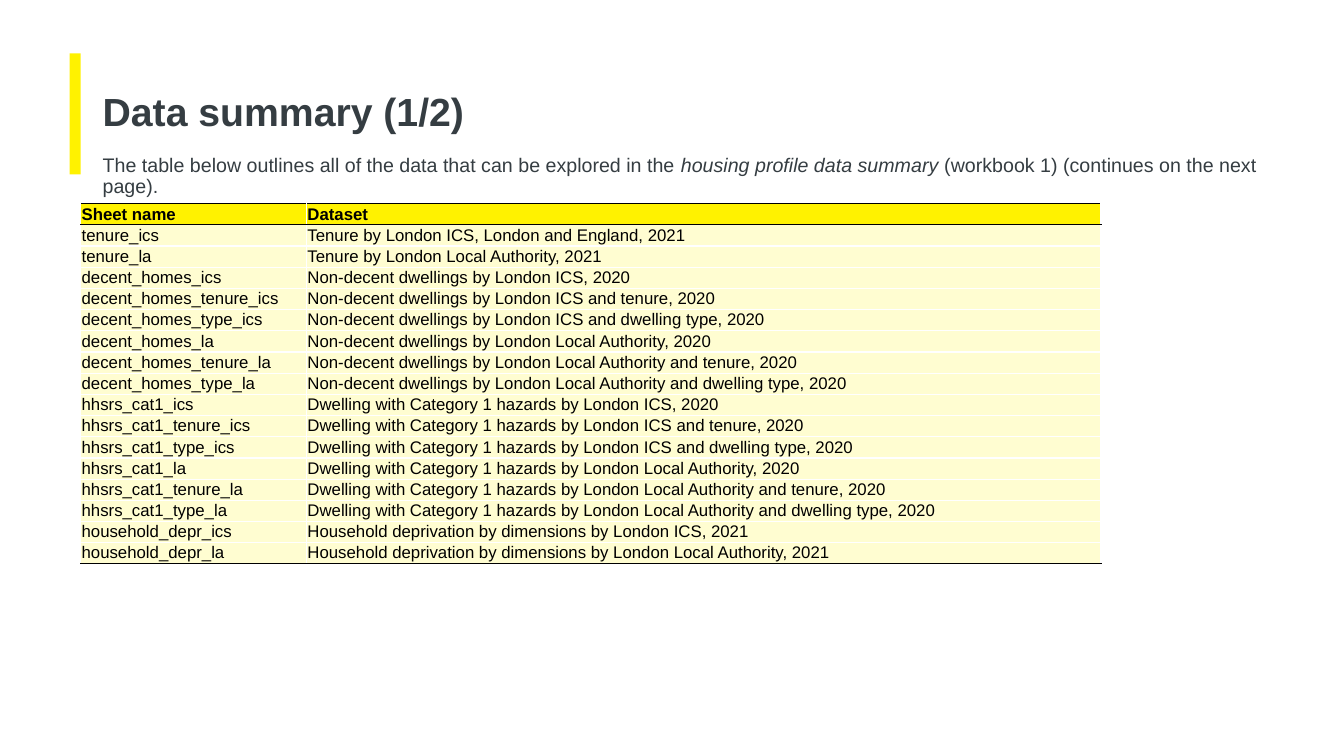
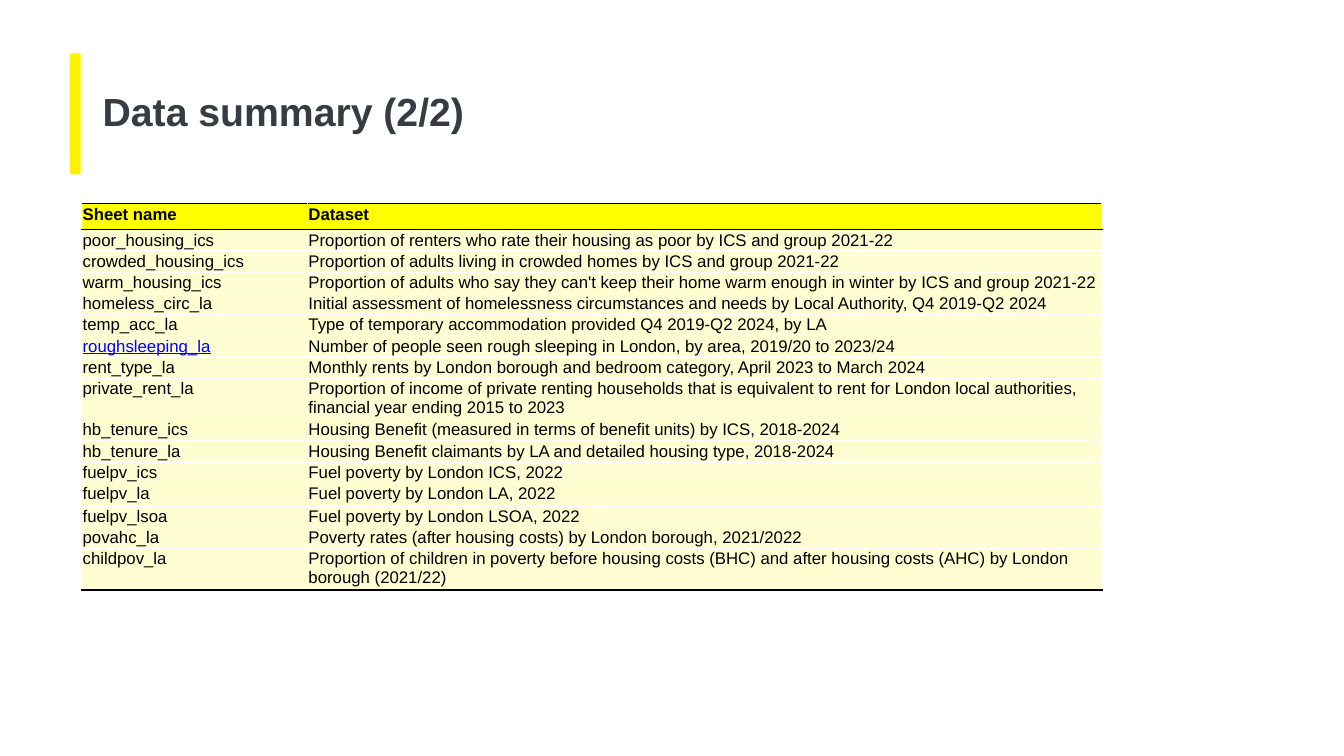
from dataclasses import dataclass

from lxml import etree
from pptx import Presentation
from pptx.dml.color import RGBColor
from pptx.enum.shapes import MSO_SHAPE
from pptx.enum.text import MSO_ANCHOR
from pptx.oxml.ns import qn
from pptx.slide import Slide
from pptx.table import _Cell
from pptx.text.text import _Paragraph, _Run
from pptx.util import Emu, Pt

RECTANGLE = MSO_SHAPE.RECTANGLE
TOP, MIDDLE = MSO_ANCHOR.TOP, MSO_ANCHOR.MIDDLE

EMU_PER_PX = 9144  # 100 px to the inch
FONT = "Arial"
COLORS = {
    "yellow": "FFF200",
    "bright_yellow": "FFFF00",
    "cream": "FFFDD1",
    "slate": "353D42",
    "black": "000000",
    "white": "FFFFFF",
    "link": "0000FF",
}
BLANK_LAYOUT = 6
COLUMN_WIDTHS = (224, 788)
TABLE_TOP = 202
ROW_HEIGHT = 19
HEADINGS = ("Sheet name", "Dataset")


@dataclass(frozen=True)
class Row:
    sheet: str
    dataset: str
    height: int = ROW_HEIGHT
    linked: bool = False


@dataclass(frozen=True)
class SummaryPage:
    title: str
    table_left: int
    header_color: str
    header_bottom_margin: int
    rows: tuple[Row, ...]
    intro: tuple[tuple[str, bool], ...] = ()  # (text, italic)


PAGES = (
    SummaryPage(
        "Data summary (1/2)", 80, "yellow", 0,
        (
            Row("tenure_ics", "Tenure by London ICS, London and England, 2021"),
            Row("tenure_la", "Tenure by London Local Authority, 2021"),
            Row("decent_homes_ics", "Non-decent dwellings by London ICS, 2020"),
            Row("decent_homes_tenure_ics", "Non-decent dwellings by London ICS and tenure, 2020"),
            Row("decent_homes_type_ics", "Non-decent dwellings by London ICS and dwelling type, 2020"),
            Row("decent_homes_la", "Non-decent dwellings by London Local Authority, 2020"),
            Row("decent_homes_tenure_la", "Non-decent dwellings by London Local Authority and tenure, 2020"),
            Row("decent_homes_type_la", "Non-decent dwellings by London Local Authority and dwelling type, 2020"),
            Row("hhsrs_cat1_ics", "Dwelling with Category 1 hazards by London ICS, 2020"),
            Row("hhsrs_cat1_tenure_ics", "Dwelling with Category 1 hazards by London ICS and tenure, 2020"),
            Row("hhsrs_cat1_type_ics", "Dwelling with Category 1 hazards by London ICS and dwelling type, 2020"),
            Row("hhsrs_cat1_la", "Dwelling with Category 1 hazards by London Local Authority, 2020"),
            Row("hhsrs_cat1_tenure_la", "Dwelling with Category 1 hazards by London Local Authority and tenure, 2020"),
            Row("hhsrs_cat1_type_la", "Dwelling with Category 1 hazards by London Local Authority and dwelling type, 2020"),
            Row("household_depr_ics", "Household deprivation by dimensions by London ICS, 2021"),
            Row("household_depr_la", "Household deprivation by dimensions by London Local Authority, 2021"),
        ),
        (
            ("The table below outlines all of the data that can be explored in the ", False),
            ("housing profile data summary", True),
            (" (workbook 1) (continues on the next page).", False),
        ),
    ),
    SummaryPage(
        "Data summary (2/2)", 81, "bright_yellow", 5,
        (
            Row("poor_housing_ics", "Proportion of renters who rate their housing as poor by ICS and group 2021-22"),
            Row("crowded_housing_ics", "Proportion of adults living in crowded homes by ICS and group 2021-22"),
            Row("warm_housing_ics", "Proportion of adults who say they can't keep their home warm enough in winter "
                "by ICS and group 2021-22"),
            Row("homeless_circ_la", "Initial assessment of homelessness circumstances and needs by Local Authority, "
                "Q4 2019-Q2 2024"),
            Row("temp_acc_la", "Type of temporary accommodation provided Q4 2019-Q2 2024, by LA"),
            Row("roughsleeping_la", "Number of people seen rough sleeping in London, by area, 2019/20 to 2023/24",
                linked=True),
            Row("rent_type_la", "Monthly rents by London borough and bedroom category, April 2023 to March 2024"),
            Row("private_rent_la", "Proportion of income of private renting households that is equivalent to rent "
                "for London local authorities, financial year ending 2015 to 2023"),
            Row("hb_tenure_ics", "Housing Benefit (measured in terms of benefit units) by ICS, 2018-2024"),
            Row("hb_tenure_la", "Housing Benefit claimants by LA and detailed housing type, 2018-2024"),
            Row("fuelpv_ics", "Fuel poverty by London ICS, 2022"),
            Row("fuelpv_la", "Fuel poverty by London LA, 2022", height=23),
            Row("fuelpv_lsoa", "Fuel poverty by London LSOA, 2022"),
            Row("povahc_la", "Poverty rates (after housing costs) by London borough, 2021/2022"),
            Row("childpov_la", "Proportion of children in poverty before housing costs (BHC) and after housing "
                "costs (AHC) by London borough (2021/22)"),
        ),
    ),
)


def px(length: int) -> Emu:
    return Emu(length * EMU_PER_PX)


def rgb(name: str) -> RGBColor:
    return RGBColor.from_string(COLORS[name])


def format_run(run: _Run, size: int, color: str, bold: bool = False, italic: bool = False) -> None:
    run.font.name = FONT
    run.font.size = Pt(size)
    run.font.color.rgb = rgb(color)
    run.font.bold = bold
    run.font.italic = italic


def add_text_box(slide: Slide, left: int, top: int, width: int, height: int, anchor: MSO_ANCHOR) -> _Paragraph:
    text_frame = slide.shapes.add_textbox(px(left), px(top), px(width), px(height)).text_frame
    text_frame.word_wrap = True
    text_frame.vertical_anchor = anchor
    paragraph = text_frame.paragraphs[0]
    paragraph.line_spacing = 0.9
    return paragraph


# Accent bar and title
def add_heading(slide: Slide, title: str) -> None:
    bar = slide.shapes.add_shape(RECTANGLE, px(69), px(53), px(11), px(120))
    bar.shadow.inherit = False
    bar.fill.solid()
    bar.fill.fore_color.rgb = rgb("yellow")
    bar.line.fill.background()
    paragraph = add_text_box(slide, 92, 40, 1150, 145, MIDDLE)
    paragraph.text = title
    format_run(paragraph.runs[0], 28, "slate", bold=True)


# Introductory sentence
def add_intro(slide: Slide, parts: tuple[tuple[str, bool], ...]) -> None:
    paragraph = add_text_box(slide, 92, 149, 1185, 43, TOP)
    for text, italic in parts:
        run = paragraph.add_run()
        run.text = text
        format_run(run, 14, "slate", italic=italic)


# Table cells
def set_borders(cell: _Cell, top: str, bottom: str) -> None:
    properties = cell._tc.get_or_add_tcPr()
    sides = {"a:lnL": "white", "a:lnR": "white", "a:lnT": top, "a:lnB": bottom}
    for position, (tag, color) in enumerate(sides.items()):
        line = etree.Element(qn(tag), w=str(Pt(1)))
        fill = etree.SubElement(line, qn("a:solidFill"))
        etree.SubElement(fill, qn("a:srgbClr"), val=COLORS[color])
        properties.insert(position, line)


def fill_cell(cell: _Cell, text: str, fill: str, bold: bool, linked: bool) -> None:
    cell.text_frame.text = text
    cell.margin_left = cell.margin_right = cell.margin_top = px(1)
    cell.margin_bottom = 0
    cell.fill.solid()
    cell.fill.fore_color.rgb = rgb(fill)
    run = cell.text_frame.paragraphs[0].runs[0]
    format_run(run, 12, "link" if linked else "black", bold=bold)
    run.font.underline = linked


# Table with a ruled header and a closing rule
def add_summary_table(slide: Slide, page: SummaryPage) -> None:
    rows = (Row(*HEADINGS), *page.rows)
    last = len(rows) - 1
    frame = slide.shapes.add_table(
        len(rows), len(COLUMN_WIDTHS), px(page.table_left), px(TABLE_TOP),
        px(sum(COLUMN_WIDTHS)), px(sum(row.height for row in rows)),
    )
    table = frame.table
    table.horz_banding = False
    for column, width in zip(table.columns, COLUMN_WIDTHS):
        column.width = px(width)
    for index, row in enumerate(rows):
        table.rows[index].height = px(row.height)
        is_header = index == 0
        top = "black" if index <= 1 else "white"
        bottom = "black" if index in (0, last) else "white"
        for column_index, text in enumerate((row.sheet, row.dataset)):
            cell = table.cell(index, column_index)
            fill = page.header_color if is_header else "cream"
            fill_cell(cell, text, fill, is_header, row.linked and column_index == 0)
            set_borders(cell, top, bottom)
            if is_header:
                cell.vertical_anchor = MIDDLE
                cell.margin_bottom = px(page.header_bottom_margin)


def main() -> None:
    presentation = Presentation()
    presentation.slide_width = px(1333)
    presentation.slide_height = px(750)
    for page in PAGES:
        slide = presentation.slides.add_slide(presentation.slide_layouts[BLANK_LAYOUT])
        add_heading(slide, page.title)
        if page.intro:
            add_intro(slide, page.intro)
        add_summary_table(slide, page)
    presentation.save("out.pptx")


if __name__ == "__main__":
    main()
